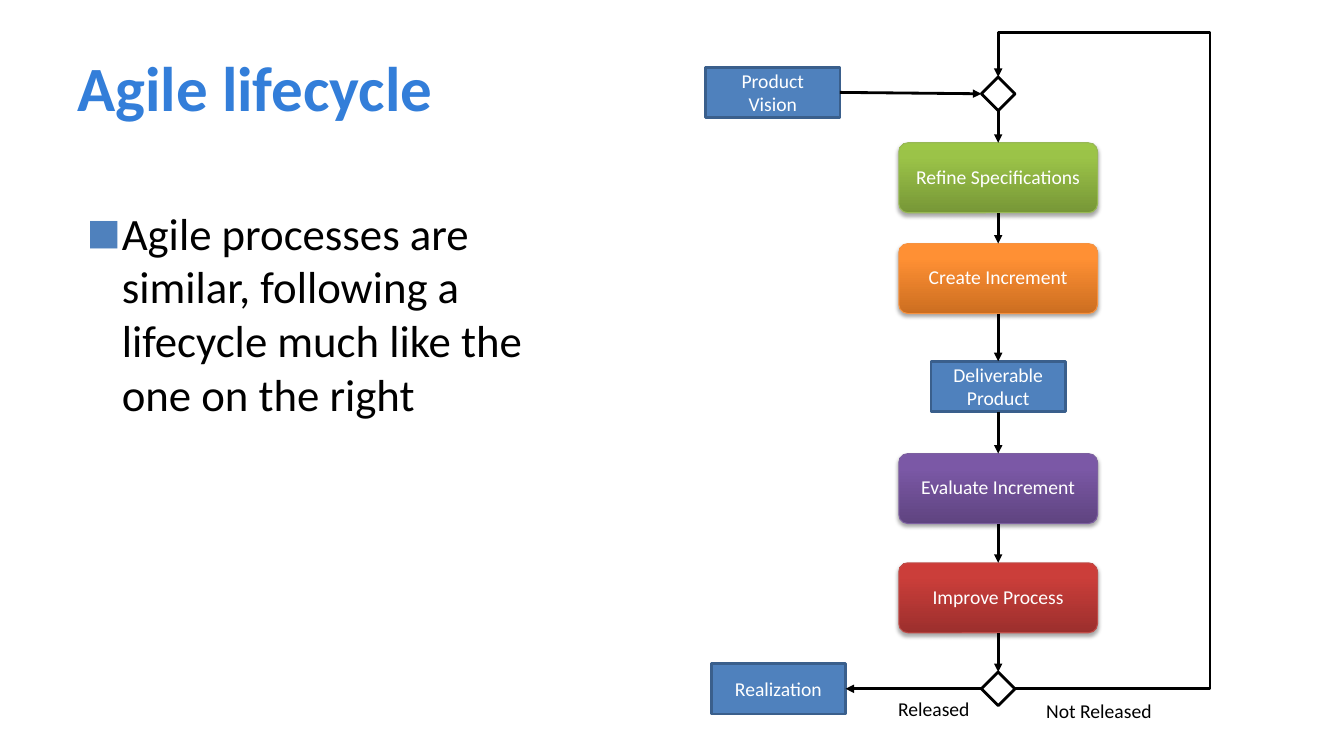
from copy import deepcopy

from lxml.etree import SubElement
from pptx import Presentation
from pptx.dml.color import RGBColor
from pptx.enum.shapes import MSO_CONNECTOR as Link, MSO_SHAPE as Shape
from pptx.enum.text import MSO_ANCHOR as Anchor, PP_ALIGN as Align
from pptx.oxml.ns import qn
from pptx.util import Pt

BLACK = RGBColor(0x00, 0x00, 0x00)
WHITE = RGBColor(0xFF, 0xFF, 0xFF)
HEADING = RGBColor(0x33, 0x7E, 0xD9)
BLUE = RGBColor(0x4F, 0x81, 0xBD)
BLUE_EDGE = RGBColor(0x3A, 0x5F, 0x8C)
GREEN = [RGBColor(0x77, 0x97, 0x37), RGBColor(0x9B, 0xC3, 0x48), RGBColor(0x9D, 0xC7, 0x46)]
GREEN_EDGE = RGBColor(0x98, 0xB9, 0x55)
ORANGE = [RGBColor(0xCC, 0x6E, 0x20), RGBColor(0xFF, 0x90, 0x34), RGBColor(0xFF, 0x91, 0x36)]
ORANGE_EDGE = RGBColor(0xF6, 0x92, 0x40)
PURPLE = [RGBColor(0x5F, 0x44, 0x80), RGBColor(0x7B, 0x58, 0xA6), RGBColor(0x7C, 0x57, 0xA8)]
PURPLE_EDGE = RGBColor(0x7D, 0x60, 0xA0)
RED = [RGBColor(0x9C, 0x2F, 0x2D), RGBColor(0xCB, 0x3E, 0x3A), RGBColor(0xCE, 0x3B, 0x37)]
RED_EDGE = RGBColor(0xBF, 0x4C, 0x48)

TOP, LEFT, BOTTOM, RIGHT = range(4)
FLOW_X = 713


def set_all(target, values):
    for name, value in values.items():
        setattr(target, name, value)


def add_xml(parent, tag, **attributes):
    return SubElement(parent, qn(tag), attributes)


class LifecycleSlide:
    font = "Calibri"
    small = 14
    stroke = 2

    def __init__(self, deck):
        self.slide = deck.slides.add_slide(deck.slide_layouts[5])
        self.shapes = self.slide.shapes

    def fill_text(self, shape, lines, color, size=small, align=Align.CENTER, bold=False, **frame):
        text = shape.text_frame
        set_all(text, {"word_wrap": True, **frame})
        text.text = "\n".join(lines)
        for paragraph in text.paragraphs:
            paragraph.alignment = align
            set_all(paragraph.runs[0].font, {"name": self.font, "size": Pt(size), "bold": bold})
            paragraph.runs[0].font.color.rgb = color

    def title(self, words):
        heading = self.shapes.title
        set_all(heading, {"left": Pt(48), "top": Pt(12), "width": Pt(864), "height": Pt(99)})
        self.fill_text(heading, [words], HEADING, 45, Align.LEFT, True,
                       vertical_anchor=Anchor.MIDDLE, margin_right=Pt(3.6))

    def text(self, words, left, top, width, height, size=small, align=Align.CENTER, **frame):
        box = self.shapes.add_textbox(Pt(left), Pt(top), Pt(width), Pt(height))
        self.fill_text(box, [words], BLACK, size, align, **frame)
        return box

    def bullet(self, words):
        box = self.text(words, 48, 139.5, 384, 364.5, 32, Align.LEFT,
                        margin_left=Pt(4.5), margin_top=Pt(7.2))
        style = box.text_frame.paragraphs[0]._p.get_or_add_pPr()
        style.set("marL", str(Pt(34.5)))
        style.set("indent", str(-Pt(25)))
        color = add_xml(style, "a:buClr")
        add_xml(color, "a:srgbClr", val=str(BLUE))
        add_xml(style, "a:buSzPct", val="80000")
        add_xml(style, "a:buFont", typeface=self.font)
        add_xml(style, "a:buChar", char="■")

    def shape(self, kind, left, top, width, height, edge, line_width=stroke):
        item = self.shapes.add_shape(kind, Pt(left), Pt(top), Pt(width), Pt(height))
        item.shadow.inherit = False
        item.line.color.rgb = edge
        item.line.width = Pt(line_width)
        return item

    def product(self, lines, left, top):
        item = self.shape(Shape.RECTANGLE, left, top, 96, 36, BLUE_EDGE)
        item.fill.solid()
        item.fill.fore_color.rgb = BLUE
        self.fill_text(item, lines, WHITE, vertical_anchor=Anchor.MIDDLE)
        return item

    def decision(self, top):
        item = self.shape(Shape.FLOWCHART_DECISION, FLOW_X - 12, top, 24, 24, BLACK)
        item.fill.solid()
        item.fill.fore_color.rgb = WHITE
        return item

    def activity(self, words, top, colors, edge):
        item = self.shape(Shape.ROUNDED_RECTANGLE, FLOW_X - 71, top, 142, 50, edge, 0.75)
        item.adjustments[0] = 0.13
        item.fill.gradient()
        item.fill.gradient_angle = 90
        stops = item._element.spPr.find(".//" + qn("a:gsLst"))
        stops.append(deepcopy(stops[-1]))
        for stop, position, color in zip(item.fill.gradient_stops, (0, 0.8, 1), colors):
            stop.position = position
            stop.color.rgb = color
        effects = item._element.spPr.find(qn("a:effectLst"))
        shadow = add_xml(effects, "a:outerShdw", blurRad=str(Pt(3.1)), dist=str(Pt(1.8)),
                         dir="5400000", rotWithShape="0")
        shade = add_xml(shadow, "a:srgbClr", val=str(BLACK))
        add_xml(shade, "a:alpha", val="35000")
        self.fill_text(item, [words], WHITE, vertical_anchor=Anchor.MIDDLE)
        item.text_frame.paragraphs[0].line_spacing = 0.9
        return item

    def arrow(self, start, start_side, end, end_side, kind=Link.STRAIGHT):
        link = self.shapes.add_connector(kind, 0, 0, 0, 0)
        link.begin_connect(start, start_side)
        link.end_connect(end, end_side)
        link.line.color.rgb = BLACK
        link.line.width = Pt(self.stroke)
        add_xml(link.line._get_or_add_ln(), "a:tailEnd", type="triangle")
        add_xml(link._element.spPr, "a:effectLst")
        return link

    def loop(self, start, end, right, top):
        link = self.arrow(start, RIGHT, end, TOP, Link.ELBOW)
        across = (link.begin_x - Pt(right)) / (link.begin_x - link.end_x)
        up = (link.begin_y - Pt(top)) / (link.begin_y - link.end_y)
        geometry = link._element.spPr.find(qn("a:prstGeom"))
        geometry.set("prst", "bentConnector4")
        guides = geometry.find(qn("a:avLst"))
        for name, ratio in (("adj1", across), ("adj2", up)):
            add_xml(guides, "a:gd", name=name, fmla=f"val {round(ratio * 100000)}")


def main():
    deck = Presentation()
    set_all(deck, {"slide_width": Pt(960), "slide_height": Pt(540)})
    page = LifecycleSlide(deck)
    page.title("Agile lifecycle")
    page.bullet("Agile processes are similar, following a lifecycle much like the one on the right")

    vision = page.product(["Product", "Vision"], 504, 48)
    entry = page.decision(55)
    refine = page.activity("Refine Specifications", 102, GREEN, GREEN_EDGE)
    create = page.activity("Create Increment", 174, ORANGE, ORANGE_EDGE)
    deliverable = page.product(["Deliverable Product"], FLOW_X - 48, 258)
    evaluate = page.activity("Evaluate Increment", 324, PURPLE, PURPLE_EDGE)
    improve = page.activity("Improve Process", 402, RED, RED_EDGE)
    release = page.decision(480)
    realization = page.product(["Realization"], 508, 474)

    flow = [entry, refine, create, deliverable, evaluate, improve, release]
    for step, following in zip(flow, flow[1:]):
        page.arrow(step, BOTTOM, following, TOP)
    page.arrow(vision, RIGHT, entry, LEFT)
    page.arrow(release, LEFT, realization, RIGHT)
    page.loop(release, entry, 864.5, 23)

    page.text("Released", 596, 494.5, 142, 24.5)
    page.text("Not Released", 714, 495.5, 142, 24.5)
    deck.save("out.pptx")


if __name__ == "__main__":
    main()
